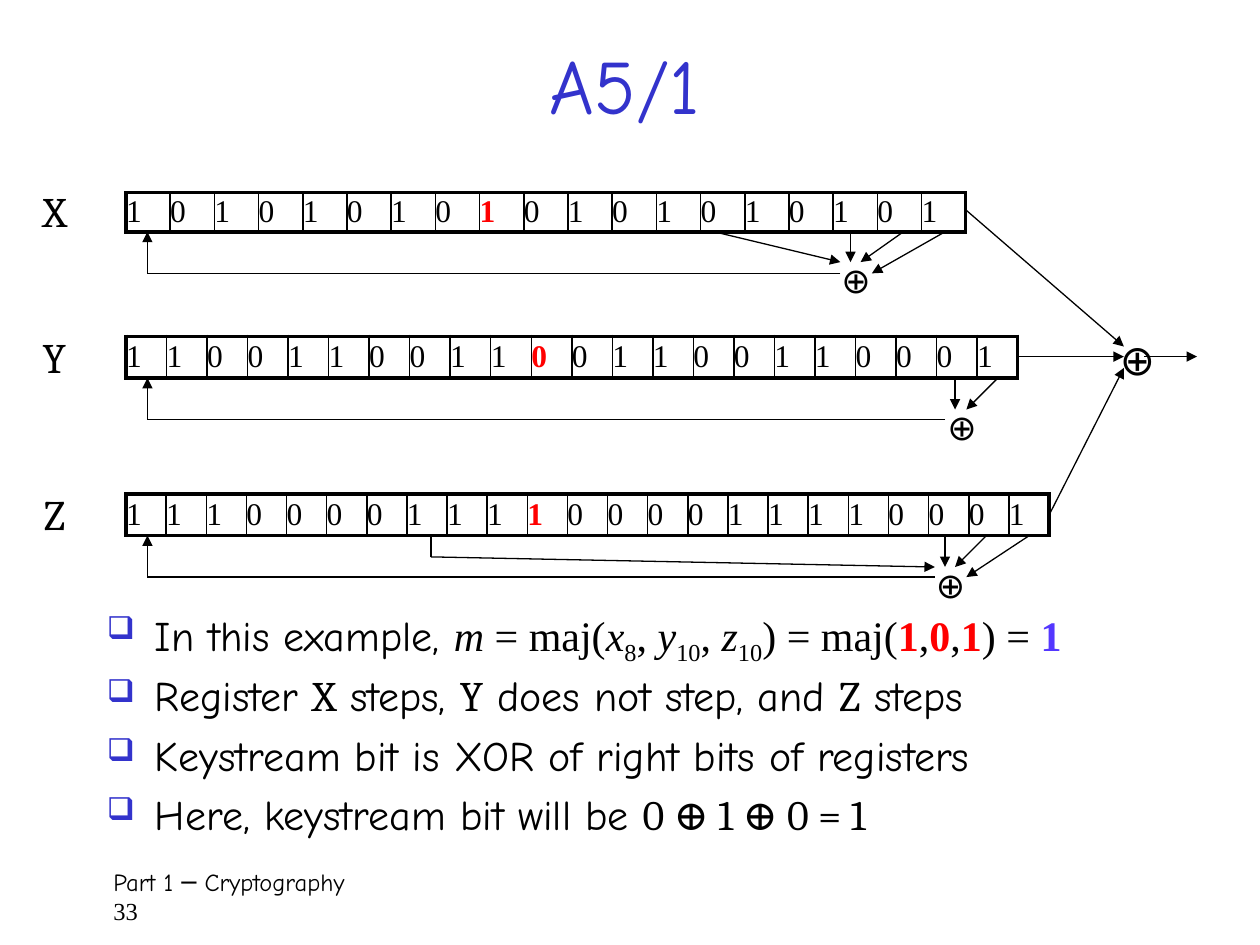
import itertools

import pptx
import pptx.dml.color
import pptx.enum.shapes
import pptx.enum.text
import pptx.oxml
import pptx.oxml.ns
import pptx.util
from lxml import etree

Inches, Pt = pptx.util.Inches, pptx.util.Pt
ANCHOR, ALIGN = pptx.enum.text.MSO_ANCHOR, pptx.enum.text.PP_ALIGN
BLACK, RED, BLUE, VIOLET = "000000", "FF0000", "3333CC", "5437FF"
COMIC, TIMES, CAMBRIA = "Comic Neue", "Times New Roman", "Cambria"

LEFT, RETURN_X = 1, 1.17
# taps: start x, then the points the wire passes on its way to the XOR
REGISTERS = [
    {"name": "X", "label": (0.24, 1.42, 0.42), "bits": "1010101010101010101", "clock": 8,
     "top": 1.53, "width": 6.67, "height": 0.31, "xor": (6.58, 2), "back": (6.67, 2.17),
     "taps": [(5.67, (6.67, 2.08)), (6.75, (6.75, 2.08)),
              (7.17, (6.83, 2.08)), (7.5, (6.92, 2.17))]},
    {"name": "Y", "label": (0.24, 2.58, 0.42), "bits": "1100110011001100110001", "clock": 10,
     "top": 2.67, "width": 7.08, "height": 0.33, "xor": (7.42, 3.17), "back": (7.5, 3.33),
     "taps": [(7.58, (7.58, 3.25)), (7.92, (7.67, 3.25))]},
    {"name": "Z", "label": (0.25, 3.83, 0.4), "bits": "11100001111000011110001", "clock": 10,
     "top": 3.92, "width": 7.33, "height": 0.33, "xor": (7.33, 4.42), "back": (7.42, 4.58),
     "taps": [(3.42, (3.42, 4.42), (7.42, 4.5)), (7.5, (7.5, 4.5)),
              (7.83, (7.58, 4.5)), (8.17, (7.67, 4.58))]},
]
# Each register's right bit, and the final sum, flow to the right
OUTPUTS = [
    [(7.67, 1.67), (8.92, 2.75)],
    [(8.08, 2.83), (8.92, 2.83)],
    [(8.33, 4.08), (8.92, 2.92)],
    [(9.08, 2.83), (9.5, 2.83)],
]

STYLES = {
    "text": {"name": COMIC},
    "math": {"name": TIMES},
    "var": {"name": TIMES, "italic": True},
    "sub": {"name": TIMES},
    "red": {"name": TIMES, "bold": True, "color": RED},
    "result": {"name": TIMES, "bold": True, "color": VIOLET},
    "reg": {"name": CAMBRIA},
}
BULLETS = [
    [("In this example, ", "text"), ("m", "var"), (" = maj(", "math"),
     ("x", "var"), ("8", "sub"), (", ", "math"), ("y", "var"), ("10", "sub"),
     (", ", "math"), ("z", "var"), ("10", "sub"), (") = maj(", "math"),
     ("1", "red"), (",", "math"), ("0", "red"), (",", "math"), ("1", "red"),
     (") = ", "math"), ("1", "result")],
    [("Register ", "text"), ("X", "reg"), (" steps, ", "text"), ("Y", "reg"),
     (" does not step, and ", "text"), ("Z", "reg"), (" steps", "text")],
    [("Keystream bit is XOR of right bits of registers", "text")],
    [("Here, keystream bit will be ", "text"), ("0 ⊕ 1 ⊕ 0 = 1", "reg")],
]


def rgb(color):
    return pptx.dml.color.RGBColor.from_string(color)


def add_span(para, text, size, color=BLACK, **font):
    span = para.add_run()
    span.text = text
    span.font.color.rgb = rgb(color)
    for key, value in {"size": Pt(size), **font}.items():
        setattr(span.font, key, value)
    return span


def add_box(page, left, top, width, height, **frame):
    box = page.shapes.add_textbox(*map(Inches, (left, top, width, height)))
    for key, value in {"word_wrap": True, **frame}.items():
        setattr(box.text_frame, key, value)
    return box.text_frame


def add_symbol(page, text, left, top, width, height, size, name):
    frame = add_box(page, left, top, width, height, word_wrap=False,
                    auto_size=pptx.enum.text.MSO_AUTO_SIZE.SHAPE_TO_FIT_TEXT)
    add_span(frame.paragraphs[0], text, size, name=name)


def add_wire(page, points, arrow=True):
    """Join the points with straight lines; the last one may end in an arrowhead."""
    for start, end in itertools.pairwise(points):
        line = page.shapes.add_connector(
            pptx.enum.shapes.MSO_CONNECTOR.STRAIGHT, *map(Inches, (*start, *end)))
        line.line.color.rgb = rgb(BLACK)
        line.line.width = Pt(0.75)
        if arrow and end == points[-1]:
            etree.SubElement(line.line._get_or_add_ln(),
                             pptx.oxml.ns.qn("a:tailEnd"), type="triangle")
        etree.SubElement(line._element.spPr, pptx.oxml.ns.qn("a:effectLst"))


def set_borders(cell, **widths):
    props = cell._tc.get_or_add_tcPr()
    for index, (side, width) in enumerate(widths.items()):
        props.insert(index, pptx.oxml.parse_xml(
            f'<a:ln{side} {pptx.oxml.ns.nsdecls("a")} w="{Pt(width)}"><a:solidFill>'
            f'<a:srgbClr val="{BLACK}"/></a:solidFill></a:ln{side}>'))


def add_cells(page, register):
    bits = register["bits"]
    count = len(bits)
    table = page.shapes.add_table(1, count, *map(Inches, (
        LEFT, register["top"], register["width"], register["height"]))).table
    table.first_row = table.horz_banding = False
    for index, bit in enumerate(bits):
        table.columns[index].width = Inches(register["width"] / count)
        cell = table.cell(0, index)
        for key, value in {"margin_left": 0, "margin_right": 0, "margin_top": 0,
                           "margin_bottom": 0, "vertical_anchor": ANCHOR.MIDDLE}.items():
            setattr(cell, key, value)
        style = STYLES["red" if index == register["clock"] else "math"]
        add_span(cell.text_frame.paragraphs[0], bit, 18, **style)
        cell.fill.background()
        set_borders(cell, L=2.25 if index == 0 else 1,
                    R=2.25 if index == count - 1 else 1, T=2.25, B=2.25)


def add_register(page, register):
    add_symbol(page, register["name"], *register["label"], 0.5, 24, CAMBRIA)
    add_symbol(page, "⊕", *register["xor"], 0.41, 0.43, 20, COMIC)
    add_cells(page, register)
    bottom = register["top"] + register["height"]
    for start, *points in register["taps"]:
        add_wire(page, [(start, bottom), *points])
    back = register["back"]
    add_wire(page, [back, (RETURN_X, back[1]), (RETURN_X, bottom)])


def add_bullets(page):
    frame = add_box(page, 0.75, 4.83, 8.5, 1.92)
    for index, spans in enumerate(BULLETS):
        para = frame.add_paragraph() if index else frame.paragraphs[0]
        for key, value in {"line_spacing": 0.8, "space_before": Pt(4.8),
                           "space_after": Pt(6)}.items():
            setattr(para, key, value)
        props = para._p.get_or_add_pPr()
        props.set("marL", str(Inches(0.38)))
        props.set("indent", str(Inches(-0.38)))
        for xml in (f'<a:buClr {{}}><a:srgbClr val="{BLUE}"/></a:buClr>',
                    '<a:buSzPct {} val="75000"/>', '<a:buChar {} char="❑"/>'):
            props.append(pptx.oxml.parse_xml(xml.format(pptx.oxml.ns.nsdecls("a"))))
        for text, style in spans:
            span = add_span(para, text, 24, **STYLES[style])
            if style == "sub":
                span._r.get_or_add_rPr().set("baseline", "-25000")


def main():
    deck = pptx.Presentation()
    deck.slide_width, deck.slide_height = Inches(10), Inches(7.5)
    page = deck.slides.add_slide(deck.slide_layouts[6])

    title = add_box(page, 0.75, 0.33, 8.42, 0.67, vertical_anchor=ANCHOR.MIDDLE)
    title.paragraphs[0].alignment = ALIGN.CENTER
    add_span(title.paragraphs[0], "A5/1", 44, BLUE, name=COMIC)

    for register in REGISTERS:
        add_register(page, register)
    add_symbol(page, "⊕", 8.79, 2.6, 0.46, 0.5, 24, COMIC)
    for points in OUTPUTS:
        add_wire(page, points)
    add_bullets(page)

    footer = add_box(page, 0.75, 6.83, 8.58, 0.5, margin_left=Inches(0.15))
    add_span(footer.paragraphs[0], "Part 1 ─ Cryptography", 14, name=COMIC)
    add_span(footer.add_paragraph(), "33", 14, name=TIMES)

    deck.save("out.pptx")


if __name__ == "__main__":
    main()
